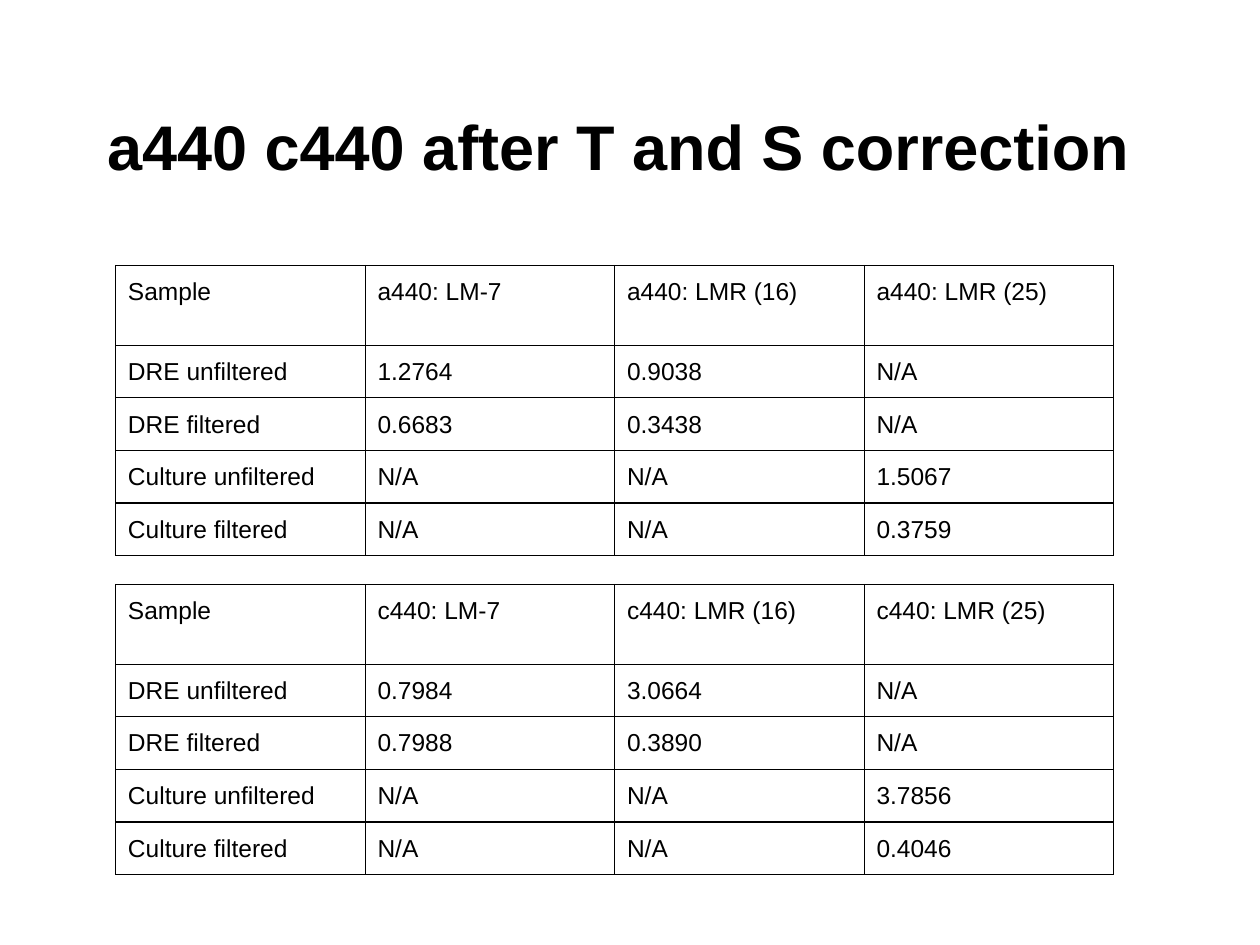
from dataclasses import dataclass

from pptx import Presentation
from pptx.dml.color import RGBColor
from pptx.enum.text import MSO_ANCHOR as Anchor, PP_ALIGN as Align
from pptx.oxml import parse_xml
from pptx.oxml.ns import nsdecls
from pptx.util import Cm, Pt

FONT = "Arial"
BLACK = "000000"
INSET = Cm(0.25)
CELL_TOP = Cm(0.26)
CELL_BOTTOM = Cm(0.2)
COLUMN_WIDTH = Cm(5.03)
HEADER_HEIGHT = Cm(1.61)
ROW_HEIGHT = Cm(1.06)
SAMPLES = ("DRE unfiltered", "DRE filtered", "Culture unfiltered", "Culture filtered")
INSTRUMENTS = ("LM-7", "LMR (16)", "LMR (25)")
MISSING = "N/A"


@dataclass
class Measurement:
    name: str
    top: Cm
    dre: list[tuple[str, str]]
    culture: list[str]

    def rows(self) -> list[list[str]]:
        header = ["Sample"] + [f"{self.name}: {item}" for item in INSTRUMENTS]
        values = [[*pair, MISSING] for pair in self.dre]
        values += [[MISSING, MISSING, value] for value in self.culture]
        return [header] + [[sample, *row] for sample, row in zip(SAMPLES, values)]


MEASUREMENTS = [
    Measurement("a440", Cm(5.35), [("1.2764", "0.9038"), ("0.6683", "0.3438")],
                ["1.5067", "0.3759"]),
    Measurement("c440", Cm(11.78), [("0.7984", "3.0664"), ("0.7988", "0.3890")],
                ["3.7856", "0.4046"]),
]


def color(value: str) -> RGBColor:
    return RGBColor.from_string(value)


def write(frame, text: str, *, size: float, bold: bool = False, indent: int = 0) -> None:
    para = frame.paragraphs[0]
    para.alignment = Align.LEFT
    if indent:
        para._p.get_or_add_pPr().set("indent", str(indent))
    span = para.add_run()
    span.text = text
    span.font.name = FONT
    span.font.size = Pt(size)
    span.font.bold = bold
    span.font.color.rgb = color(BLACK)


def set_insets(target, *, top: int = INSET, bottom: int = INSET) -> None:
    target.margin_left = target.margin_right = INSET
    target.margin_top, target.margin_bottom = top, bottom


def add_borders(cell, *, width: float, value: str) -> None:
    properties = cell._tc.get_or_add_tcPr()
    for side in "LRTB":
        properties.append(parse_xml(
            f'<a:ln{side} {nsdecls("a")} w="{Pt(width)}"><a:solidFill>'
            f'<a:srgbClr val="{value}"/></a:solidFill></a:ln{side}>'))


def add_title(page, text: str) -> None:
    box = page.shapes.add_textbox(Cm(1.27), Cm(0.76), Cm(22.86), Cm(3.18))
    frame = box.text_frame
    frame.word_wrap = True
    frame.vertical_anchor = Anchor.BOTTOM
    set_insets(frame)
    write(frame, text, size=36, bold=True, indent=Cm(0.64))


def add_measurement(page, measurement: Measurement) -> None:
    rows = measurement.rows()
    columns = len(rows[0])
    height = HEADER_HEIGHT + ROW_HEIGHT * (len(rows) - 1)
    table = page.shapes.add_table(len(rows), columns, Cm(2.33), measurement.top,
                                  COLUMN_WIDTH * columns, height).table
    table.first_row = table.horz_banding = False
    for column in table.columns:
        column.width = COLUMN_WIDTH
    for index, texts in enumerate(rows):
        table.rows[index].height = ROW_HEIGHT if index else HEADER_HEIGHT
        for position, text in enumerate(texts):
            cell = table.cell(index, position)
            set_insets(cell, top=CELL_TOP, bottom=CELL_BOTTOM)
            cell.vertical_anchor = Anchor.TOP
            add_borders(cell, width=0.75, value=BLACK)
            cell.fill.background()
            write(cell.text_frame, text, size=14)


def main() -> None:
    deck = Presentation()
    deck.slide_width, deck.slide_height = Cm(25.4), Cm(19.05)
    page = deck.slides.add_slide(deck.slide_layouts[6])

    # Heading
    add_title(page, "a440 c440 after T and S correction")

    # Absorption and attenuation tables
    for measurement in MEASUREMENTS:
        add_measurement(page, measurement)

    deck.save("out.pptx")


if __name__ == "__main__":
    main()
